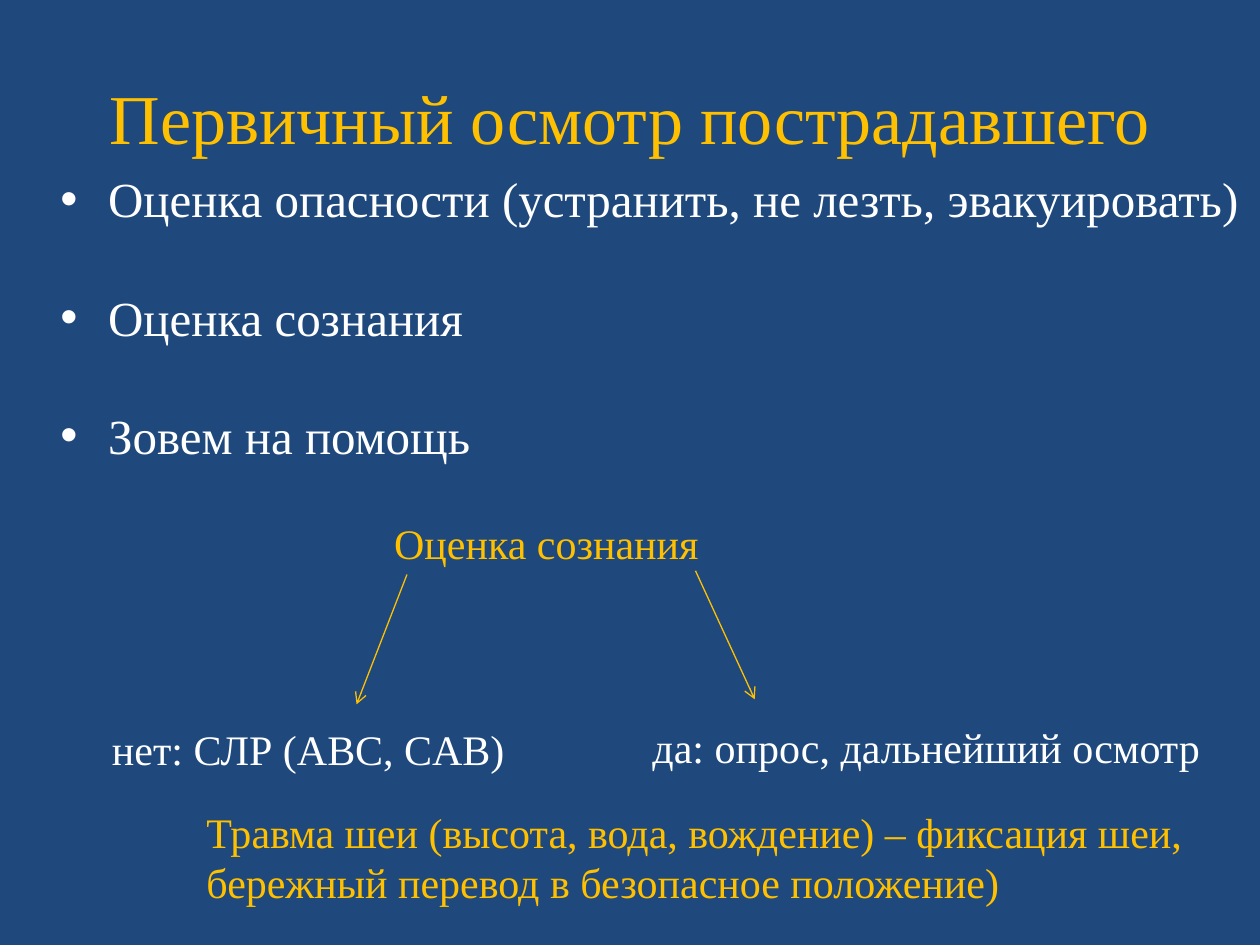
from lxml.etree import SubElement
from pptx import Presentation
from pptx.dml.color import RGBColor
from pptx.enum.shapes import MSO_CONNECTOR as Connector
from pptx.enum.text import MSO_ANCHOR as Anchor, PP_ALIGN as Align
from pptx.oxml.ns import qn
from pptx.util import Inches, Pt

FONT = "Times New Roman"
NAVY, GOLD, WHITE = "1F497D", "FFC000", "FFFFFF"


def color(value):
    """Turn a hex string into a colour."""
    return RGBColor.from_string(value)


def add_run(paragraph, text, size, fill):
    """Add one formatted run to a paragraph."""
    run = paragraph.add_run()
    run.text = text
    run.font.name = FONT
    run.font.size = Pt(size)
    run.font.color.rgb = color(fill)


def add_frame(slide, box, wrap=False):
    """Add a text box and return its text frame."""
    frame = slide.shapes.add_textbox(*map(Inches, box)).text_frame
    frame.word_wrap = wrap
    return frame


def add_label(slide, box, text, fill, wrap=False):
    """Add a single-paragraph label."""
    add_run(add_frame(slide, box, wrap).paragraphs[0], text, 24, fill)


def add_title(slide, box, text):
    """Add the centred slide title."""
    frame = add_frame(slide, box, wrap=True)
    frame.vertical_anchor = Anchor.MIDDLE
    paragraph = frame.paragraphs[0]
    paragraph.alignment = Align.CENTER
    add_run(paragraph, text, 40, GOLD)


def add_bullets(slide, box, items):
    """Add widely spaced bullet points."""
    frame = add_frame(slide, box)
    for index, text in enumerate(items):
        paragraph = frame.add_paragraph() if index else frame.paragraphs[0]
        paragraph.space_after = Pt(34)
        properties = paragraph._p.get_or_add_pPr()
        properties.set("marL", str(Inches(0.38)))
        properties.set("indent", str(-Inches(0.38)))
        SubElement(properties, qn("a:buFont")).set("typeface", "Arial")
        SubElement(properties, qn("a:buChar")).set("char", "•")
        add_run(paragraph, text, 28, WHITE)


def add_arrow(slide, start, end):
    """Add a thin gold arrow between two points."""
    arrow = slide.shapes.add_connector(Connector.STRAIGHT, *map(Inches, start + end))
    arrow.line.color.rgb = color(GOLD)
    arrow.line.width = Pt(0.75)
    SubElement(arrow.line._get_or_add_ln(), qn("a:tailEnd")).set("type", "arrow")
    SubElement(arrow._element.spPr, qn("a:effectLst"))


def add_decision(slide, box):
    """Add the consciousness check with its two outcomes."""
    left, top, width, height = box
    outcome_top = top + height - 0.5
    add_label(slide, (left + 2.24, top, 2.73, 0.5), "Оценка сознания", GOLD)
    add_arrow(slide, (left + 4.73, top + 0.47), (left + 5.2, top + 1.49))
    add_arrow(slide, (left + 2.44, top + 0.5), (left + 2.04, top + 1.53))
    add_label(slide, (left + width - 4.6, outcome_top - 0.01, 4.6, 0.5),
              "да: опрос, дальнейший осмотр", WHITE)
    add_label(slide, (left, outcome_top, 3.35, 0.5), "нет: СЛР (ABC, CAB)", WHITE)


def main():
    """Build and save the slide."""
    presentation = Presentation()
    presentation.slide_width = Inches(10)
    presentation.slide_height = Inches(7.5)
    slide = presentation.slides.add_slide(presentation.slide_layouts[6])
    slide.background.fill.solid()
    slide.background.fill.fore_color.rgb = color(NAVY)
    add_title(slide, (0.5, 0.3, 9, 1.25), "Первичный осмотр пострадавшего")
    add_bullets(slide, (0.38, 1.29, 9.75, 2.76), (
        "Оценка опасности (устранить, не лезть, эвакуировать)",
        "Оценка сознания",
        "Зовем на помощь",
    ))
    add_decision(slide, (0.79, 4.06, 8.89, 2.13))
    add_label(slide, (1.54, 6.35, 7.95, 0.91),
              "Травма шеи (высота, вода, вождение) – фиксация шеи, "
              "бережный перевод в безопасное положение)", GOLD, wrap=True)
    presentation.save("out.pptx")


if __name__ == "__main__":
    main()
